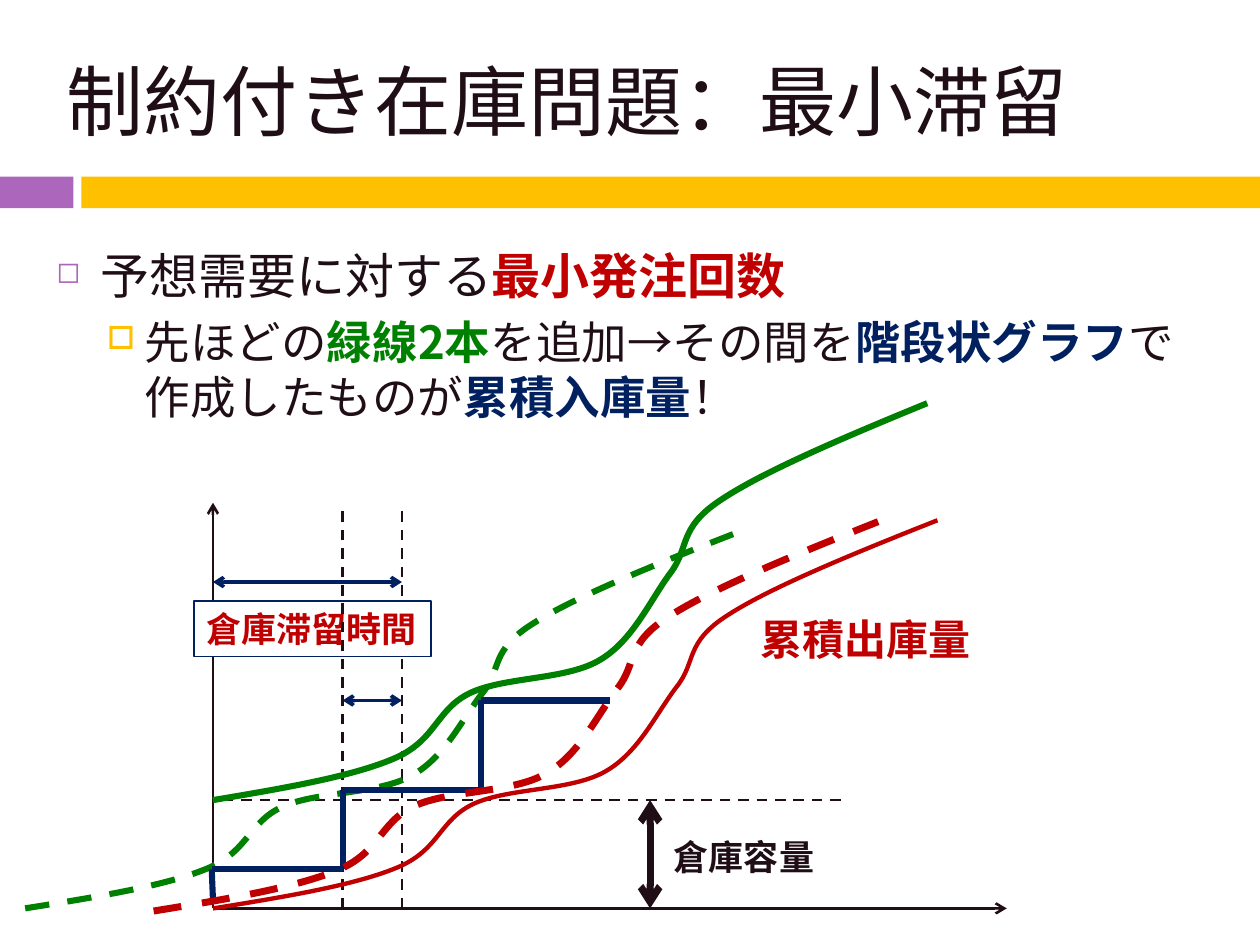
from lxml import etree
from pptx import Presentation
from pptx.dml.color import RGBColor
from pptx.enum.dml import MSO_LINE
from pptx.enum.shapes import MSO_CONNECTOR, MSO_SHAPE
from pptx.enum.text import MSO_ANCHOR, PP_ALIGN
from pptx.oxml.ns import qn
from pptx.util import Pt

RECT = MSO_SHAPE.RECTANGLE
STRAIGHT = MSO_CONNECTOR.STRAIGHT
DASH = MSO_LINE.DASH
MIDDLE = MSO_ANCHOR.MIDDLE
LEFT = PP_ALIGN.LEFT

FONT = "Noto Sans CJK JP"
INK = RGBColor(0x20, 0x0E, 0x17)
RED = RGBColor(0xC0, 0x00, 0x00)
GREEN = RGBColor(0x00, 0x80, 0x00)
NAVY = RGBColor(0x00, 0x20, 0x60)
WHITE = RGBColor(0xFF, 0xFF, 0xFF)
PURPLE = RGBColor(0xAC, 0x66, 0xBB)
GOLD = RGBColor(0xFF, 0xC0, 0x00)


def style(para, size, color=INK, bold=False):
    """Set the font of a paragraph, for Latin and East Asian text."""
    para.alignment = LEFT
    font = para.font
    font.name, font.size, font.bold = FONT, Pt(size), bold
    font.color.rgb = color
    props = para._p.find(".//" + qn("a:defRPr"))
    etree.SubElement(props, qn("a:ea"), typeface=FONT)


def rule(x1, y1, x2, y2, color, width, dash=None, ends=()):
    """Draw a straight line; ends lists the arrowheads."""
    line = shapes.add_connector(STRAIGHT, Pt(x1), Pt(y1), Pt(x2), Pt(y2))
    etree.SubElement(line._element.spPr, qn("a:effectLst"))
    line.line.color.rgb = color
    line.line.width = Pt(width)
    if dash:
        line.line.dash_style = dash
    stroke = line._element.spPr.find(qn("a:ln"))
    for end in ends:
        etree.SubElement(stroke, qn("a:" + end), type="arrow")


deck = Presentation()
deck.slide_width, deck.slide_height = Pt(720), Pt(540)
slide = deck.slides.add_slide(deck.slide_layouts[5])
shapes = slide.shapes

# Title
title = shapes.title
title.left, title.top, title.width, title.height = Pt(31), Pt(18), Pt(659), Pt(78)
title.text_frame.text = "制約付き在庫問題：最小滞留"
title.text_frame.vertical_anchor = MIDDLE
style(title.text_frame.paragraphs[0], 44)

# Band under the title
for left, width, color in ((0, 42, PURPLE), (46.5, 673.5, GOLD)):
    band = shapes.add_shape(RECT, Pt(left), Pt(101), Pt(width), Pt(18))
    band.shadow.inherit = False
    band.fill.solid()
    band.fill.fore_color.rgb = color
    band.line.fill.background()

# Bullets: size, level, indent, hang, space before, mark, its colour and size, runs
bullets = (
    (28, 0, 25.2, 25.2, 7, "◻", PURPLE, 60,
     (("予想需要に対する", INK), ("最小発注回数", RED))),
    (26, 1, 50.4, 21.6, 5.5, "□", GOLD, 70,
     (("先ほどの", INK), ("緑線2本", GREEN), ("を追加→その間を", INK),
      ("階段状グラフ", NAVY), ("で作成したものが", INK),
      ("累積入庫量", NAVY), ("！", INK))),
)
body = shapes.add_textbox(Pt(25.2), Pt(139), Pt(674.6), Pt(385)).text_frame
body.word_wrap = True
for num, (size, level, indent, hang, before, mark, tint, scale, runs) in enumerate(bullets):
    para = body.add_paragraph() if num else body.paragraphs[0]
    para.level = level
    para.space_before = Pt(before)
    para.line_spacing = Pt(31.4)
    props = para._p.get_or_add_pPr()
    props.set("marL", str(Pt(indent)))
    props.set("indent", str(-Pt(hang)))
    shade = etree.SubElement(props, qn("a:buClr"))
    etree.SubElement(shade, qn("a:srgbClr"), val=str(tint))
    etree.SubElement(props, qn("a:buSzPct"), val=str(scale * 1000))
    etree.SubElement(props, qn("a:buChar"), char=mark)
    style(para, size)
    for text, color in runs:
        run = para.add_run()
        run.text = text
        if color != INK:
            run.font.bold = True
            run.font.color.rgb = color

# Axes, guides and the longer time span
X0, Y0 = 121.7, 519.1
XA, XB = 195.8, 229.7
CAP = 457.2
rule(X0, Y0, X0, 287.3, INK, 1.5, ends=["tailEnd"])
rule(X0, Y0, 575.3, Y0, INK, 1.5, ends=["tailEnd"])
rule(127.4, CAP, 484.6, CAP, INK, 1.5, DASH)
rule(XB, Y0, XB, 292.3, INK, 1.5, DASH)
rule(X0, 332.6, XB, 332.6, NAVY, 2, ends=["headEnd", "tailEnd"])

# Labels
for text, left, top, width, height, size, color, framed in (
    ("累積出庫量", 427.7, 347, 142, 36, 24, RED, False),
    ("倉庫滞留時間", 110.9, 343.4, 135.4, 31.7, 20, RED, True),
    ("倉庫容量", 378, 473.8, 95, 31.7, 20, INK, False),
):
    label = shapes.add_textbox(Pt(left), Pt(top), Pt(width), Pt(height))
    label.text_frame.word_wrap = True
    label.text_frame.vertical_anchor = MIDDLE
    label.text_frame.text = text
    style(label.text_frame.paragraphs[0], size, color, True)
    if framed:
        label.fill.solid()
        label.fill.fore_color.rgb = WHITE
        label.line.color.rgb = NAVY
        label.line.width = Pt(0.75)

# Shorter time span, its guide and the capacity arrow
rule(XA, 400.3, XB, 400.3, NAVY, 2, ends=["headEnd", "tailEnd"])
rule(XA, Y0, XA, 292.3, INK, 1.5, DASH)
rule(371.5, CAP, 371.5, Y0, INK, 4, ends=["headEnd", "tailEnd"])

# Curves share one Bezier outline: distance right of and above the start
WIDE, HIGH = 414, 221.8
outline = (
    (0, 0), (40.3, 6.5), (79.9, 13), (104.4, 23), (129.6, 33.1),
    (128.9, 50.4), (149, 59.8), (169.2, 69.1), (205.2, 67), (224.6, 78.5),
    (243.4, 89.3), (253.4, 111.6), (265, 126.7), (276.5, 141.1),
    (269.3, 151.9), (294.5, 167.8), (319, 183.6), (366.5, 203), (WIDE, HIGH),
)
for left, base, width, height, color, weight, dash in (
    (X0, Y0, WIDE, HIGH, RED, 2.5, None),
    (X0, CAP, 408.2, 226.8, GREEN, 3.5, None),
    (14.4, Y0, 408.2, 215.3, GREEN, 3.5, DASH),
    (87.8, 520.6, WIDE, 222.5, RED, 4, DASH),
):
    points = [(Pt(left + x * width / WIDE), Pt(base - y * height / HIGH))
              for x, y in outline]
    form = shapes.build_freeform(*points[0])
    form.add_line_segments(points[1:], close=False)
    curve = form.convert_to_shape()
    # Turn each three straight steps into one Bezier segment
    steps = list(curve._element.iter(qn("a:lnTo")))
    for first in range(0, len(steps), 3):
        bend = etree.SubElement(steps[first].getparent(), qn("a:cubicBezTo"))
        for step in steps[first:first + 3]:
            bend.append(step[0])
            step.getparent().remove(step)
    curve.shadow.inherit = False
    curve.fill.background()
    curve.line.color.rgb = color
    curve.line.width = Pt(weight)
    if dash:
        curve.line.dash_style = dash

# Stairs of the stock received
stairs = ((X0, 514.1), (121, 496.8), (XA, 496.8), (XA, 451.4),
          (275, 451.4), (275, 400.3), (348.5, 400.3))
for start, end in zip(stairs, stairs[1:]):
    rule(*start, *end, NAVY, 3.5)

# The dashed red curve lies over the stairs
shapes._spTree.append(curve._element)

deck.save("out.pptx")
